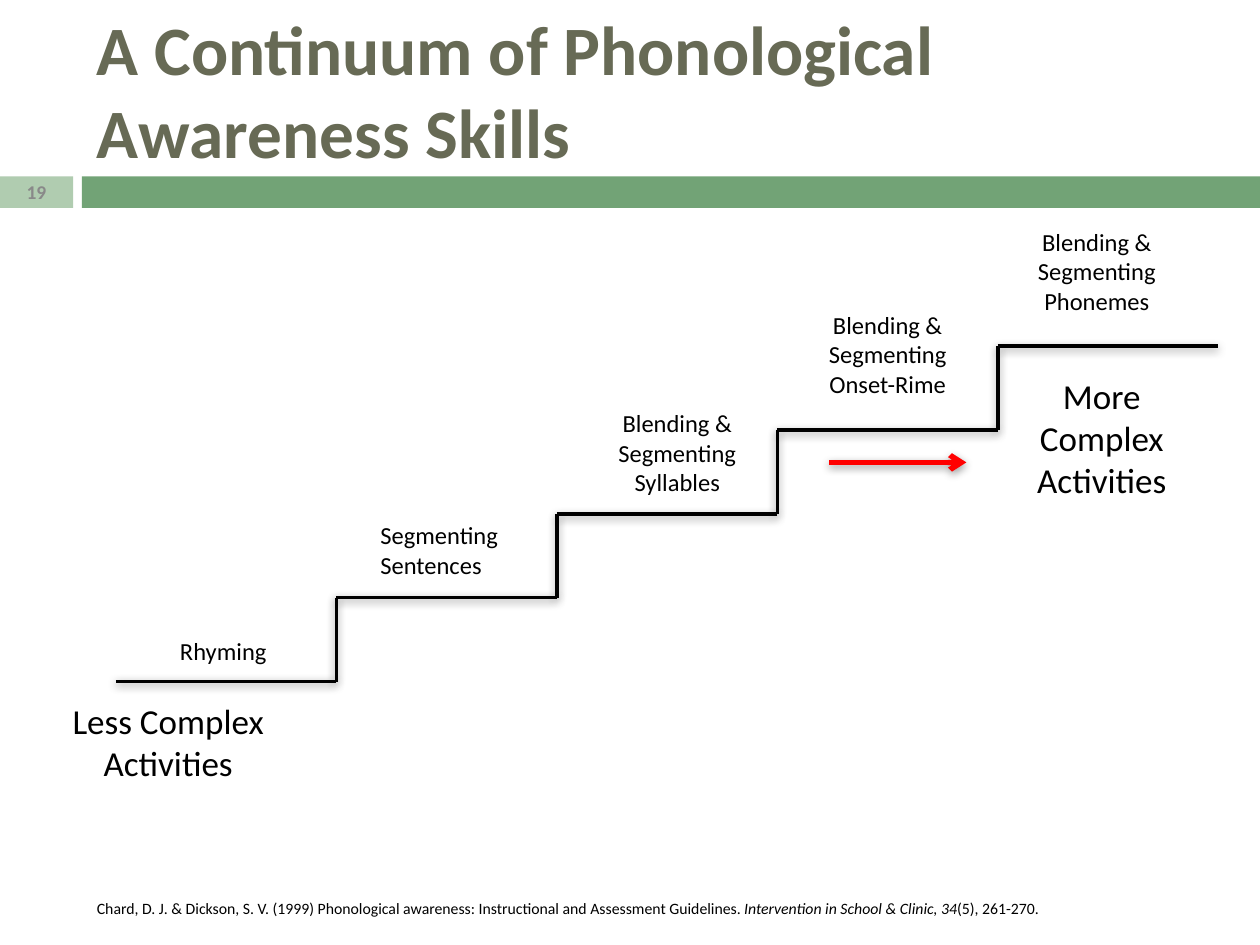
from dataclasses import dataclass

from lxml import etree
from pptx import Presentation
from pptx.dml.color import RGBColor
from pptx.enum.shapes import MSO_CONNECTOR, MSO_SHAPE
from pptx.enum.text import MSO_ANCHOR, PP_ALIGN
from pptx.oxml.ns import qn
from pptx.util import Inches, Pt

LEFT, CENTER = PP_ALIGN.LEFT, PP_ALIGN.CENTER
TOP, MIDDLE = MSO_ANCHOR.TOP, MSO_ANCHOR.MIDDLE
STRAIGHT, RECTANGLE = MSO_CONNECTOR.STRAIGHT, MSO_SHAPE.RECTANGLE

FONT = "Calibri"
COLORS = {
    "black": "000000",
    "title": "676A55",
    "number": "898989",
    "band": "72A376",
    "number_band": "B0CCB0",
    "arrow": "FF0000",
}


@dataclass
class Run:
    text: str
    italic: bool = False


@dataclass
class Label:
    left: float
    top: float
    width: float
    height: float
    runs: list[Run]
    size: float = 14
    align: PP_ALIGN = CENTER
    anchor: MSO_ANCHOR = TOP
    color: str = "black"
    bold: bool = False
    wrap: bool = True


def rgb(name: str) -> RGBColor:
    return RGBColor.from_string(COLORS[name])


def add_band(slide, left: float, width: float, color: str) -> None:
    band = slide.shapes.add_shape(
        RECTANGLE, Inches(left), Inches(1.4), Inches(width), Inches(0.25))
    band.shadow.inherit = False
    band.fill.solid()
    band.fill.fore_color.rgb = rgb(color)
    band.line.fill.background()


def add_label(slide, label: Label) -> None:
    box = slide.shapes.add_textbox(
        Inches(label.left), Inches(label.top), Inches(label.width), Inches(label.height))
    frame = box.text_frame
    frame.word_wrap = label.wrap
    frame.vertical_anchor = label.anchor
    paragraph = frame.paragraphs[0]
    paragraph.alignment = label.align
    for part in label.runs:
        run = paragraph.add_run()
        run.text = part.text
        run.font.name = FONT
        run.font.size = Pt(label.size)
        run.font.bold = label.bold
        run.font.italic = part.italic
        run.font.color.rgb = rgb(label.color)


def add_line(slide, start: tuple[float, float], end: tuple[float, float],
             color: str = "black", width: float = 2, arrow: bool = False) -> None:
    line = slide.shapes.add_connector(STRAIGHT, *map(Inches, start + end))
    line.line.color.rgb = rgb(color)
    line.line.width = Pt(width)
    if arrow:
        etree.SubElement(line.line._get_or_add_ln(), qn("a:tailEnd"), type="arrow")

    # Soft shadow straight below the line
    effects = etree.SubElement(line._element.spPr, qn("a:effectLst"))
    shadow = etree.SubElement(
        effects, qn("a:outerShdw"), blurRad=str(Pt(5)), dist=str(Pt(1.6)),
        dir="5400000", rotWithShape="0")
    shade = etree.SubElement(shadow, qn("a:srgbClr"), val=COLORS["black"])
    etree.SubElement(shade, qn("a:alpha"), val="38000")


# Staircase geometry
STEP_COUNT = 5
STEP_LEFT, STEP_BOTTOM = 0.92, 5.41
STEP_WIDTH, STEP_RISE = 1.75, 0.666


def add_staircase(slide) -> None:
    for step in range(STEP_COUNT):
        x = STEP_LEFT + step * STEP_WIDTH
        y = STEP_BOTTOM - step * STEP_RISE
        add_line(slide, (x, y), (x + STEP_WIDTH, y))
        if step:
            add_line(slide, (x, y), (x, y + STEP_RISE))


HEADINGS = [
    Label(0.67, 0.17, 8.92, 1.08, [Run("A Continuum of Phonological Awareness Skills")],
          size=39.6, align=LEFT, anchor=MIDDLE, color="title", bold=True),
    Label(0, 1.39, 0.58, 0.27, [Run("19")],
          size=11.1, anchor=MIDDLE, color="number", bold=True),
]
SKILLS = [
    Label(1.33, 5, 0.98, 0.34, [Run("Rhyming")], align=LEFT, wrap=False),
    Label(2.92, 4.08, 1.25, 0.57, [Run("Segmenting Sentences")], align=LEFT),
    Label(4.75, 3.19, 1.25, 0.81, [Run("Blending & Segmenting Syllables")]),
    Label(6.42, 2.41, 1.25, 0.81, [Run("Blending & Segmenting Onset-Rime")]),
    Label(8.08, 1.75, 1.25, 0.81, [Run("Blending & Segmenting Phonemes")]),
]
ENDS = [
    Label(0.42, 5.5, 1.83, 1.11, [Run("Less Complex Activities")], size=20),
    Label(7.83, 2.92, 1.83, 1.11, [Run("More Complex Activities")], size=20),
]
CITATION = Label(0.67, 7.08, 9.08, 0.25, [
    Run("Chard, D. J. & Dickson, S. V. (1999) Phonological awareness: "
        "Instructional and Assessment Guidelines. "),
    Run("Intervention in School & Clinic, 34", italic=True),
    Run("(5), 261-270."),
], size=9, align=LEFT)


def main() -> None:
    prs = Presentation()
    prs.slide_width, prs.slide_height = Inches(10), Inches(7.5)
    slide = prs.slides.add_slide(prs.slide_layouts[6])

    # Bands under the title
    add_band(slide, 0, 0.58, "number_band")
    add_band(slide, 0.65, 9.35, "band")

    # Steps and the arrow towards complexity
    add_staircase(slide)
    add_line(slide, (6.58, 3.67), (7.67, 3.67), "arrow", 3, arrow=True)

    # Wording
    for label in [*HEADINGS, *SKILLS, *ENDS, CITATION]:
        add_label(slide, label)

    prs.save("out.pptx")


if __name__ == "__main__":
    main()
